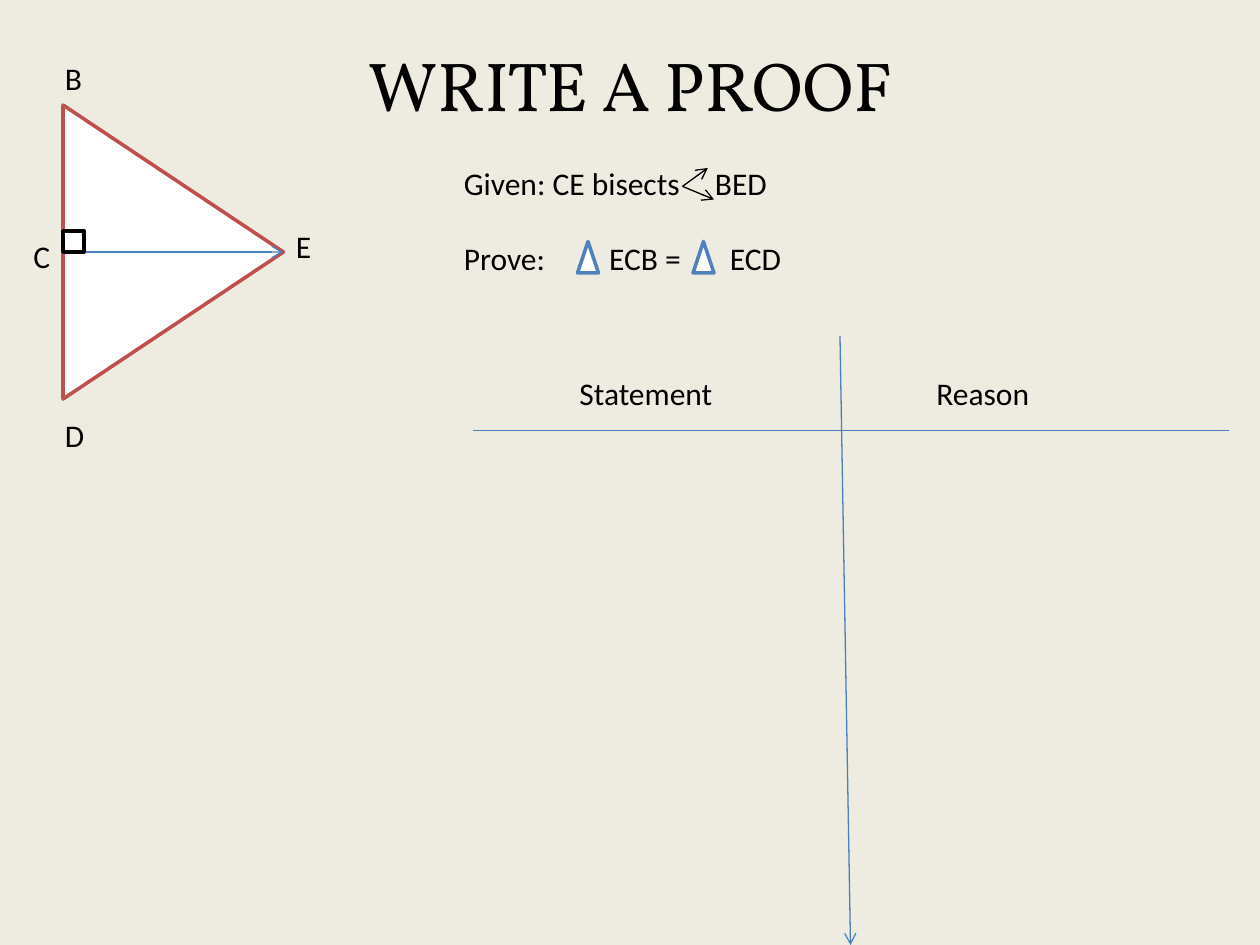
from dataclasses import dataclass

from lxml.etree import SubElement
from pptx import Presentation
from pptx.dml.color import RGBColor
from pptx.enum.shapes import MSO_CONNECTOR as Connector, MSO_SHAPE as Preset
from pptx.enum.text import MSO_ANCHOR as Anchor, MSO_AUTO_SIZE as AutoSize, PP_ALIGN as Align
from pptx.oxml.ns import qn
from pptx.util import Pt

BEIGE = RGBColor(0xEE, 0xEC, 0xE1)
WHITE = RGBColor(0xFF, 0xFF, 0xFF)
BLACK = RGBColor(0x00, 0x00, 0x00)
RED = RGBColor(0xC0, 0x50, 0x4D)
BLUE = RGBColor(0x4F, 0x81, 0xBD)
LINE_BLUE = RGBColor(0x4B, 0x7E, 0xBC)


@dataclass(frozen=True)
class Label:
    text: str
    left: float
    top: float
    width: float
    height: float = 29
    tabs: tuple[float, ...] = ()
    space_before: float = 0


@dataclass(frozen=True)
class Outline:
    preset: Preset
    left: float
    top: float
    width: float
    height: float
    color: RGBColor
    rotation: float = 0


@dataclass(frozen=True)
class Stroke:
    start: tuple[float, float]
    end: tuple[float, float]
    color: RGBColor = LINE_BLUE
    arrow: bool = True


TRIANGLE = Outline(Preset.ISOSCELES_TRIANGLE, 15, 81, 168, 126, RED, 90)
RIGHT_ANGLE = Outline(Preset.RECTANGLE, 36, 132, 12, 12, BLACK)
BISECTOR = Stroke((36, 144), (162, 144))
LABELS = [
    Label("B", 30, 30, 25),
    Label("E", 162, 126, 23),
    Label("D", 30, 234, 26),
    Label("C", 12, 132, 25),
    Label("Statement", 324, 210, 96),
    Label("Reason", 528, 210, 72),
]
CLAIMS = [
    Label("Given: CE bisects\tBED", 258, 90, 200, 30, (143.5,)),
    Label("Prove:\tECB =\tECD", 258, 133, 200, 30, (83, 152)),
]
ANGLE_SIGN = [Stroke((390, 106.5), end, BLACK) for end in ((404.5, 96), (408, 114))]
TRIANGLE_SIGNS = [
    Outline(Preset.ISOSCELES_TRIANGLE, left, 138, 12, 18, BLUE) for left in (330, 396)
]
PROOF_LINES = [
    Stroke((270, 246), (702, 246), arrow=False),
    Stroke((480, 192), (486, 540)),
]


def write_text(frame, text: str, *, font: str, size: float, align: Align = Align.LEFT):
    para = frame.paragraphs[0]
    para.alignment = align
    span = para.add_run()
    span.text = text
    span.font.name = font
    span.font.size = Pt(size)
    span.font.color.rgb = BLACK
    return para


def draw_label(shapes, label: Label) -> None:
    box = shapes.add_textbox(Pt(label.left), Pt(label.top), Pt(label.width), Pt(label.height))
    box.text_frame.word_wrap = False
    para = write_text(box.text_frame, label.text, font="Calibri", size=18)
    if label.tabs:
        stops = SubElement(para._p.get_or_add_pPr(), qn("a:tabLst"))
        for position in label.tabs:
            SubElement(stops, qn("a:tab"), pos=str(int(Pt(position))), algn="l")


def draw_outline(shapes, outline: Outline) -> None:
    shape = shapes.add_shape(
        outline.preset, Pt(outline.left), Pt(outline.top), Pt(outline.width), Pt(outline.height)
    )
    shape.rotation = outline.rotation
    shape.shadow.inherit = False
    shape.fill.solid()
    shape.fill.fore_color.rgb = WHITE
    shape.line.color.rgb = outline.color
    shape.line.width = Pt(2)


def draw_stroke(shapes, stroke: Stroke) -> None:
    points = [Pt(value) for value in (*stroke.start, *stroke.end)]
    connector = shapes.add_connector(Connector.STRAIGHT, *points)
    connector.line.color.rgb = stroke.color
    connector.line.width = Pt(0.75)
    if stroke.arrow:
        SubElement(connector.line._get_or_add_ln(), qn("a:tailEnd"), type="arrow")
    SubElement(connector._element.spPr, qn("a:effectLst"))


def draw_title(title) -> None:
    title.left, title.top, title.width, title.height = Pt(36), Pt(3), Pt(648), Pt(90)
    frame = title.text_frame
    frame.auto_size = AutoSize.NONE
    frame.vertical_anchor = Anchor.MIDDLE
    write_text(frame, "WRITE A PROOF", font="Vollkorn", size=39.6, align=Align.CENTER)


def main() -> None:
    deck = Presentation()
    deck.slide_width, deck.slide_height = Pt(720), Pt(540)
    page = deck.slides.add_slide(deck.slide_layouts[5])
    page.background.fill.solid()
    page.background.fill.fore_color.rgb = BEIGE

    draw_title(page.shapes.title)
    draw_outline(page.shapes, TRIANGLE)
    draw_stroke(page.shapes, BISECTOR)
    draw_outline(page.shapes, RIGHT_ANGLE)
    for label in LABELS:
        draw_label(page.shapes, label)

    claims = page.shapes.add_group_shape().shapes
    for claim in CLAIMS:
        draw_label(claims, claim)
    for stroke in ANGLE_SIGN:
        draw_stroke(claims, stroke)
    for sign in TRIANGLE_SIGNS:
        draw_outline(claims, sign)

    for stroke in PROOF_LINES:
        draw_stroke(page.shapes, stroke)
    deck.save("out.pptx")


if __name__ == "__main__":
    main()
